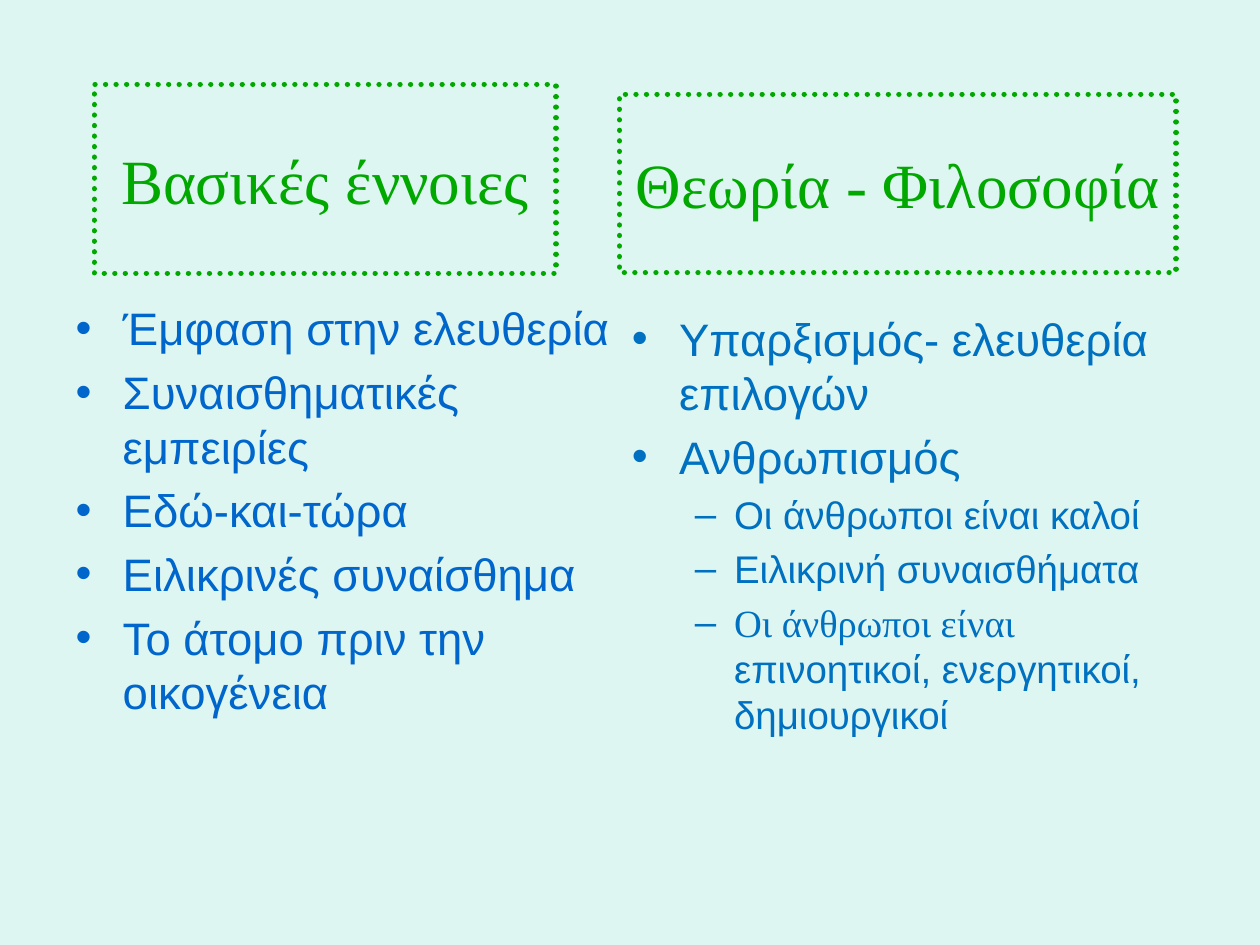
from lxml import etree
from pptx import Presentation
from pptx.dml.color import RGBColor
from pptx.enum.dml import MSO_LINE
from pptx.enum.shapes import MSO_SHAPE as Form
from pptx.enum.text import MSO_ANCHOR as Anchor, MSO_AUTO_SIZE as Fit, PP_ALIGN as Align
from pptx.oxml.ns import qn
from pptx.util import Cm, Pt

MINT = RGBColor(0xDE, 0xF6, 0xF1)
GREEN = RGBColor(0x00, 0xA8, 0x00)
BLUE = RGBColor(0x00, 0x66, 0xCC)
AZURE = RGBColor(0x00, 0x70, 0xC0)
SANS, SERIF = "Arial", "Times New Roman"
LEVELS = [("•", 0.95, 0.95, 26), ("–", 2.06, 0.79, 22)]

BASICS = [
    (0, [("Έμφαση στην ελευθερία", SANS)]),
    (0, [("Συναισθηματικές εμπειρίες", SANS)]),
    (0, [("Εδώ-και-τώρα", SANS)]),
    (0, [("Ειλικρινές συναίσθημα", SANS)]),
    (0, [("Το άτομο πριν την οικογένεια", SANS)]),
]
THEORY = [
    (0, [("Υπαρξισμός- ελευθερία επιλογών", SANS)]),
    (0, [("Ανθρωπισμός", SANS)]),
    (1, [("Οι άνθρωποι είναι καλοί", SANS)]),
    (1, [("Ειλικρινή συναισθήματα", SANS)]),
    (1, [("Οι άνθρωποι είναι ", SERIF),
         ("επινοητικοί, ενεργητικοί, δημιουργικοί", SANS)]),
]


class Deck:
    """Holds the style and the current slide."""

    def __init__(self):
        self.show = Presentation()
        self.show.slide_width, self.show.slide_height = Cm(25.4), Cm(19.05)
        self.slide = self.show.slides.add_slide(self.show.slide_layouts[1])
        fill = self.slide.background.fill
        fill.solid()
        fill.fore_color.rgb = MINT

    def place(self, shape, box):
        shape.left, shape.top, shape.width, shape.height = map(Cm, box)
        frame = shape.text_frame
        frame.word_wrap = True
        frame.auto_size = Fit.NONE
        return frame

    def run(self, para, text, face, size, color):
        run = para.add_run()
        run.text = text
        font = run.font
        font.name, font.size, font.color.rgb = face, Pt(size), color

    def head(self, text, box, shape=None):
        if shape is None:
            shape = self.slide.shapes.add_shape(Form.RECTANGLE, *map(Cm, box))
            shape.shadow.inherit = False
        frame = self.place(shape, box)
        frame.vertical_anchor = Anchor.MIDDLE
        shape.fill.background()
        line = shape.line
        line.color.rgb, line.width = GREEN, Pt(3)
        line.dash_style = MSO_LINE.ROUND_DOT
        shape.element.spPr.find(qn("a:ln")).set("cap", "rnd")
        para = frame.paragraphs[0]
        para.alignment = Align.CENTER
        self.run(para, text, SERIF, 36, GREEN)

    def list(self, items, box, color, shape=None):
        if shape is None:
            shape = self.slide.shapes.add_textbox(*map(Cm, box))
        frame = self.place(shape, box)
        for i, (level, runs) in enumerate(items):
            para = frame.add_paragraph() if i else frame.paragraphs[0]
            mark, left, hang, size = LEVELS[level]
            para.level = level
            para.space_before = Pt(size * 0.2 if i else 0)
            props = para._p.get_or_add_pPr()
            props.set("marL", str(Cm(left)))
            props.set("indent", str(-Cm(hang)))
            etree.SubElement(props, qn("a:buFont")).set("typeface", SANS)
            etree.SubElement(props, qn("a:buChar")).set("char", mark)
            for text, face in runs:
                self.run(para, text, face, size, color)


def main():
    deck = Deck()
    title, body = deck.slide.placeholders
    deck.head("Βασικές έννοιες", (1.9, 1.7, 9.31, 3.81), title)
    deck.list(BASICS, (1.27, 5.93, 12.07, 10.77), BLUE, body)
    deck.list(THEORY, (12.49, 6.14, 11.22, 11.5), AZURE)
    deck.head("Θεωρία - Φιλοσοφία", (12.49, 1.9, 11.22, 3.6))
    deck.show.save("out.pptx")


if __name__ == "__main__":
    main()
